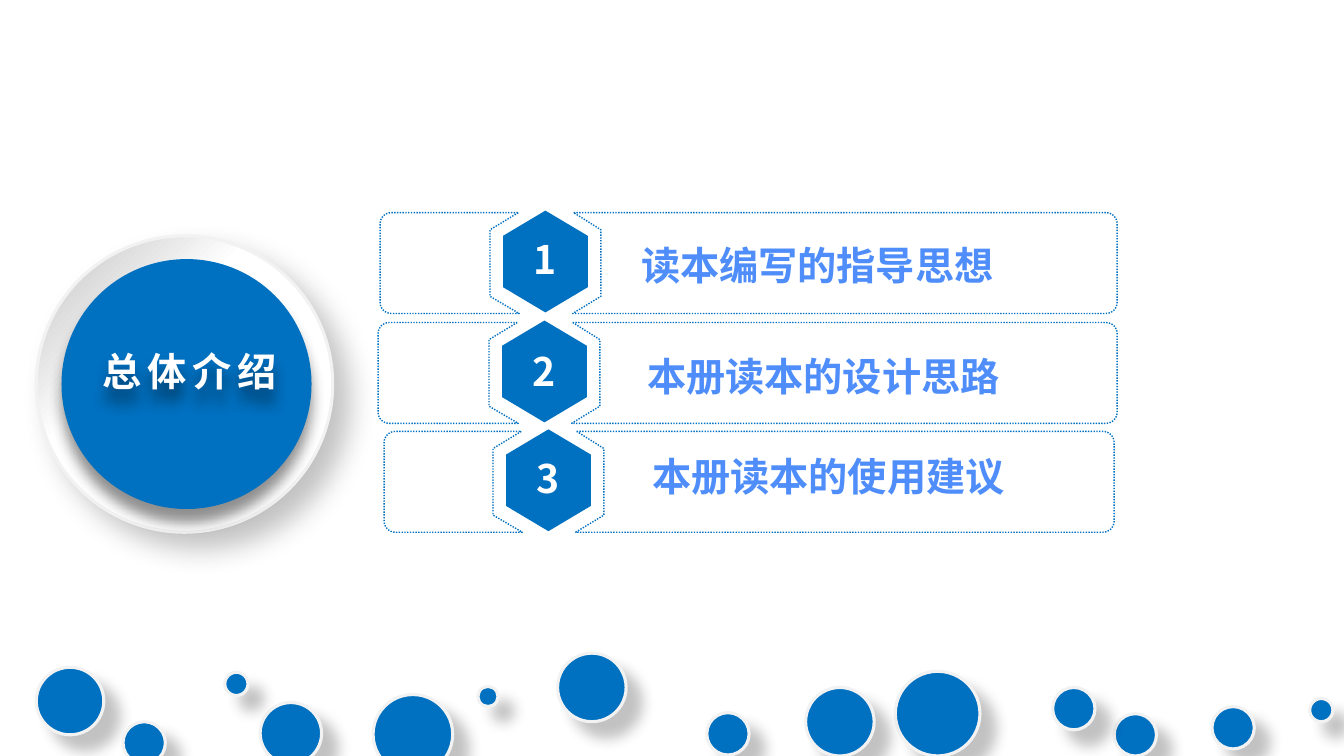
import math

import lxml.etree
import pptx
import pptx.dml.color
import pptx.enum.dml
import pptx.enum.shapes
import pptx.enum.text
import pptx.oxml.ns
import pptx.util

Inches = pptx.util.Inches
Pt = pptx.util.Pt
qn = pptx.oxml.ns.qn
colour = pptx.dml.color.RGBColor.from_string
OVAL = pptx.enum.shapes.MSO_SHAPE.OVAL
ALIGN = pptx.enum.text.PP_ALIGN

BLUE, TEXT_BLUE, WHITE, RIM = "0070C0", "4F8EFA", "FFFFFF", "F2F2F2"
CJK_FONT = "Noto Sans CJK SC"


def add_shadow(shape, opacity, blur, distance, angle):
    shape.shadow.inherit = False
    effects = shape._element.spPr.find(qn("a:effectLst"))
    shadow = lxml.etree.SubElement(
        effects, qn("a:outerShdw"), blurRad=str(Pt(blur)), dist=str(Pt(distance)),
        dir=str(angle * 60000), algn="ctr", rotWithShape="0")
    black = lxml.etree.SubElement(shadow, qn("a:srgbClr"), val="000000")
    lxml.etree.SubElement(black, qn("a:alpha"), val=str(opacity * 1000))


def write_text(box, text, hex_colour, font_name, align, wrap):
    frame = box.text_frame
    frame.text = text
    frame.word_wrap = wrap
    frame.vertical_anchor = pptx.enum.text.MSO_ANCHOR.TOP
    frame.auto_size = pptx.enum.text.MSO_AUTO_SIZE.SHAPE_TO_FIT_TEXT
    para = frame.paragraphs[0]
    para.alignment = align
    span = para.runs[0]
    span.font.size = Pt(28)
    span.font.bold = True
    span.font.color.rgb = colour(hex_colour)
    span.font.name = font_name
    lxml.etree.SubElement(span.font._element, qn("a:ea"), typeface=CJK_FONT)
    return span


deck = pptx.Presentation()
deck.slide_width, deck.slide_height = Inches(13.33), Inches(7.5)
page = deck.slides.add_slide(deck.slide_layouts[5])
shapes = page.shapes

# Scattered dots along the bottom: left, top, diameter
dots = [
    (2.58, 6.97, 0.61), (5.53, 6.48, 0.68), (8.88, 6.66, 0.84), (7.01, 7.07, 0.42),
    (0.36, 6.62, 0.67), (3.7, 6.89, 0.79), (7.99, 6.82, 0.68), (2.23, 6.67, 0.23),
    (1.22, 7.16, 0.42), (11.05, 7.08, 0.42), (4.74, 6.81, 0.2), (12.99, 6.93, 0.23),
    (10.44, 6.82, 0.42), (12.02, 7.01, 0.42),
]
for left, top, size in dots:
    dot = shapes.add_shape(OVAL, Inches(left), Inches(top), Inches(size), Inches(size))
    dot.fill.solid()
    dot.fill.fore_color.rgb = colour(BLUE)
    dot.line.color.rgb = colour(RIM)
    dot.line.width = Pt(2.25)
    add_shadow(dot, 23, 10, 15, 45)

# Large badge: shaded ring with a blue disc
ring = shapes.add_shape(OVAL, Inches(0.36), Inches(2.34), Inches(2.94), Inches(2.94))
ring.fill.gradient()
ring.fill.gradient_angle = 315
for stop, hex_colour, position in zip(ring.fill.gradient_stops, ("BFBFBF", WHITE), (0, 0.37)):
    stop.color.rgb = colour(hex_colour)
    stop.position = position
ring.line.color.rgb = colour(RIM)
ring.line.width = Pt(2.25)
add_shadow(ring, 23, 20, 15, 45)

disc = shapes.add_shape(OVAL, Inches(0.61), Inches(2.57), Inches(2.48), Inches(2.48))
disc.fill.solid()
disc.fill.fore_color.rgb = colour(BLUE)
disc.line.fill.background()
add_shadow(disc, 43, 10, 10, 90)

# Title on the disc, brought in front of it
title = shapes.title
title.left, title.top, title.width, title.height = map(Inches, (0.92, 3.4, 2, 0.57))
title_span = write_text(title, "总体介绍", WHITE, "Arial", ALIGN.LEFT, False)
title_span.font._element.set("spc", "400")
add_shadow(title, 43, 10, 10, 90)
title._element.getparent().append(title._element)

# Rows: panel left, right, top; hexagon centre; number box top; heading and its place
rows = [
    (3.77, 11.08, 2.11, 5.41, 2.29, "读本编写的指导思想", 6.26, 2.34),
    (3.75, 11.08, 3.2, 5.4, 3.4, "本册读本的设计思路", 6.32, 3.45),
    (3.81, 11.05, 4.28, 5.44, 4.46, "本册读本的使用建议", 6.37, 4.44),
]
radius = 0.11
arc = [(radius * (1 - math.sin(step * math.pi / 16)), radius * (1 - math.cos(step * math.pi / 16)))
       for step in range(9)]

for number, (left, right, top, centre, number_top, heading, text_left, text_top) in enumerate(rows, 1):
    bottom = top + 1

    # Panel in two parts, notched around the hexagon
    left_part = [(centre - 0.27, top), (centre - 0.55, top + 0.17),
                 (centre - 0.55, top + 0.83), (centre - 0.26, bottom)]
    left_part += [(left + dx, bottom - dy) for dx, dy in arc]
    left_part += [(left + dx, top + dy) for dx, dy in reversed(arc)]
    right_part = [(centre + 0.28, top)]
    right_part += [(right - dx, top + dy) for dx, dy in arc]
    right_part += [(right - dx, bottom - dy) for dx, dy in reversed(arc)]
    right_part += [(centre + 0.27, bottom), (centre + 0.55, top + 0.83),
                   (centre + 0.55, top + 0.17)]

    # Upright hexagon
    peak = top - 0.02
    corners = [(centre, peak), (centre + 0.42, peak + 0.25), (centre + 0.42, peak + 0.76),
               (centre, peak + 1.01), (centre - 0.42, peak + 0.76), (centre - 0.42, peak + 0.25)]

    # Draw the dotted panel, then the solid hexagon
    for contours, filled in (([left_part, right_part], False), ([corners], True)):
        outline = shapes.build_freeform()
        for contour in contours:
            points = [(Inches(x), Inches(y)) for x, y in contour]
            outline.move_to(*points[0])
            outline.add_line_segments(points[1:], close=True)
        piece = outline.convert_to_shape()
        piece.shadow.inherit = False
        if filled:
            piece.fill.solid()
            piece.fill.fore_color.rgb = colour(BLUE)
            piece.line.fill.background()
        else:
            piece.fill.background()
            piece.line.color.rgb = colour(BLUE)
            piece.line.width = Pt(1)
            piece.line.dash_style = pptx.enum.dml.MSO_LINE.ROUND_DOT

    # Number and heading
    box = shapes.add_textbox(Inches(centre - 0.5), Inches(number_top), Inches(1), Inches(0.57))
    write_text(box, str(number), WHITE, CJK_FONT, ALIGN.CENTER, True)
    box = shapes.add_textbox(Inches(text_left), Inches(text_top), Inches(3.75), Inches(0.57))
    write_text(box, heading, TEXT_BLUE, "Arial", ALIGN.LEFT, False)

deck.save("out.pptx")
